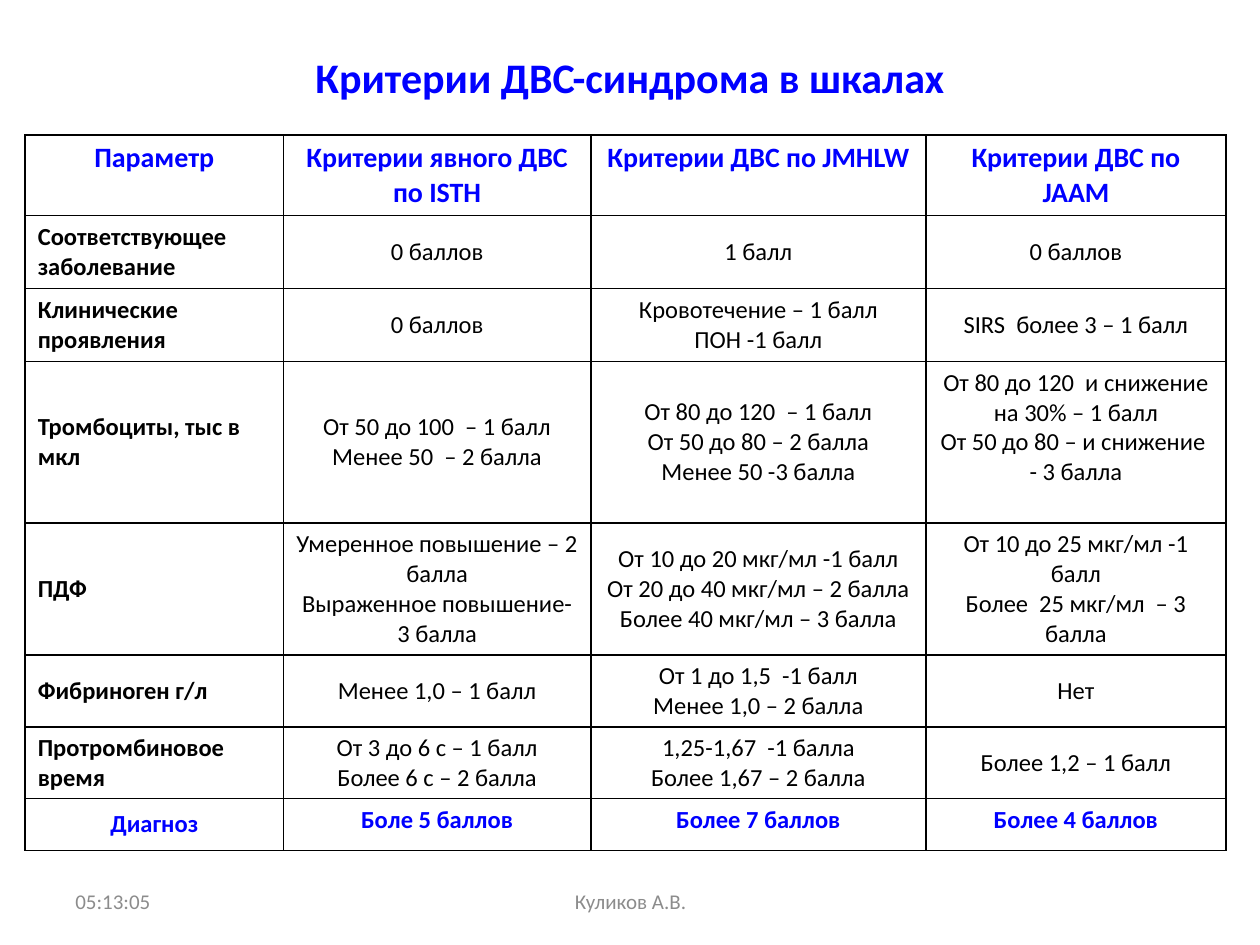
"""Build a slide comparing DIC criteria across three scoring scales."""
from lxml.etree import SubElement
from pptx import Presentation
from pptx.dml.color import RGBColor
from pptx.enum.text import MSO_ANCHOR, PP_ALIGN
from pptx.oxml.ns import qn
from pptx.util import Inches, Pt

BLUE = RGBColor(0x00, 0x00, 0xFF)
BLACK = RGBColor(0x00, 0x00, 0x00)
GRAY = RGBColor(0x8C, 0x8C, 0x8C)
FONT = "Calibri"

TITLE = "Критерии ДВС-синдрома в шкалах"
TIME = "05:13:05"
AUTHOR = "Куликов А.В."
ROWS = [
    ("Параметр", "Критерии явного ДВС по ISTH", "Критерии ДВС по JMHLW",
     "Критерии ДВС по JAAM"),
    ("Соответствующее заболевание", "0 баллов", "1 балл", "0 баллов"),
    ("Клинические проявления", "0 баллов", "Кровотечение – 1 балл\nПОН -1 балл",
     "SIRS  более 3 – 1 балл"),
    ("Тромбоциты, тыс в мкл",
     "От 50 до 100  – 1 балл\nМенее 50  – 2 балла",
     "От 80 до 120  – 1 балл\nОт 50 до 80 – 2 балла\nМенее 50 -3 балла",
     "От 80 до 120  и снижение на 30% – 1 балл\nОт 50 до 80 – и снижение  - 3 балла"),
    ("ПДФ",
     "Умеренное повышение – 2 балла\nВыраженное повышение- 3 балла",
     "От 10 до 20 мкг/мл -1 балл\nОт 20 до 40 мкг/мл – 2 балла\nБолее 40 мкг/мл – 3 балла",
     "От 10 до 25 мкг/мл -1 балл\nБолее  25 мкг/мл  – 3 балла"),
    ("Фибриноген г/л", "Менее 1,0 – 1 балл",
     "От 1 до 1,5  -1 балл\nМенее 1,0 – 2 балла", "Нет"),
    ("Протромбиновое время", "От 3 до 6 с – 1 балл\nБолее 6 с – 2 балла",
     "1,25-1,67  -1 балла\nБолее 1,67 – 2 балла", "Более 1,2 – 1 балл"),
    ("Диагноз", "Боле 5 баллов", "Более 7 баллов", "Более 4 баллов"),
]
COLUMN_WIDTHS = [2.05, 2.44, 2.66, 2.38]
ROW_HEIGHTS = [0.64, 0.58, 0.58, 1.28, 1.05, 0.57, 0.57, 0.41]
TOP_CELLS = {(3, 3), (7, 1), (7, 2), (7, 3)}


def write(frame, text, size, color, bold=False, align=PP_ALIGN.CENTER):
    frame.text = text
    frame.word_wrap = True
    for paragraph in frame.paragraphs:
        paragraph.alignment = align
        for span in paragraph.runs:
            span.font.name = FONT
            span.font.size = Pt(size)
            span.font.bold = bold
            span.font.color.rgb = color


def add_text(page, place, text, size, color, **style):
    box = page.shapes.add_textbox(*map(Inches, place))
    write(box.text_frame, text, size, color, **style)
    box.text_frame.vertical_anchor = MSO_ANCHOR.MIDDLE


def add_borders(cell):
    properties = cell._tc.get_or_add_tcPr()
    for side in ("a:lnL", "a:lnR", "a:lnT", "a:lnB"):
        line = SubElement(properties, qn(side), w=str(Pt(1)))
        fill = SubElement(line, qn("a:solidFill"))
        SubElement(fill, qn("a:srgbClr"), val=str(BLACK))


def add_criteria(page):
    frame = page.shapes.add_table(
        len(ROWS), len(COLUMN_WIDTHS), Inches(0.2), Inches(1.07),
        Inches(sum(COLUMN_WIDTHS)), Inches(sum(ROW_HEIGHTS)))
    table = frame.table
    table.first_row = table.horz_banding = False
    for column, width in zip(table.columns, COLUMN_WIDTHS):
        column.width = Inches(width)
    for row, height in zip(table.rows, ROW_HEIGHTS):
        row.height = Inches(height)
    last = len(ROWS) - 1
    for r, texts in enumerate(ROWS):
        for c, text in enumerate(texts):
            cell = table.cell(r, c)
            accent = r in (0, last)
            label = c == 0 and not accent
            write(cell.text_frame, text, 16 if r == 0 else 14,
                  BLUE if accent else BLACK, bold=accent or label,
                  align=PP_ALIGN.LEFT if label else PP_ALIGN.CENTER)
            top = r == 0 or (r, c) in TOP_CELLS
            cell.vertical_anchor = MSO_ANCHOR.TOP if top else MSO_ANCHOR.MIDDLE
            add_borders(cell)
            cell.fill.background()


def main():
    deck = Presentation()
    deck.slide_width, deck.slide_height = Inches(10), Inches(7.5)
    page = deck.slides.add_slide(deck.slide_layouts[6])
    add_text(page, (0.5, 0.3, 9, 0.61), TITLE, 24, BLUE, bold=True)
    add_criteria(page)
    add_text(page, (0.5, 6.95, 2.33, 0.4), TIME, 12, GRAY, align=PP_ALIGN.LEFT)
    add_text(page, (3.42, 6.95, 3.17, 0.4), AUTHOR, 12, GRAY)
    deck.save("out.pptx")


if __name__ == "__main__":
    main()
